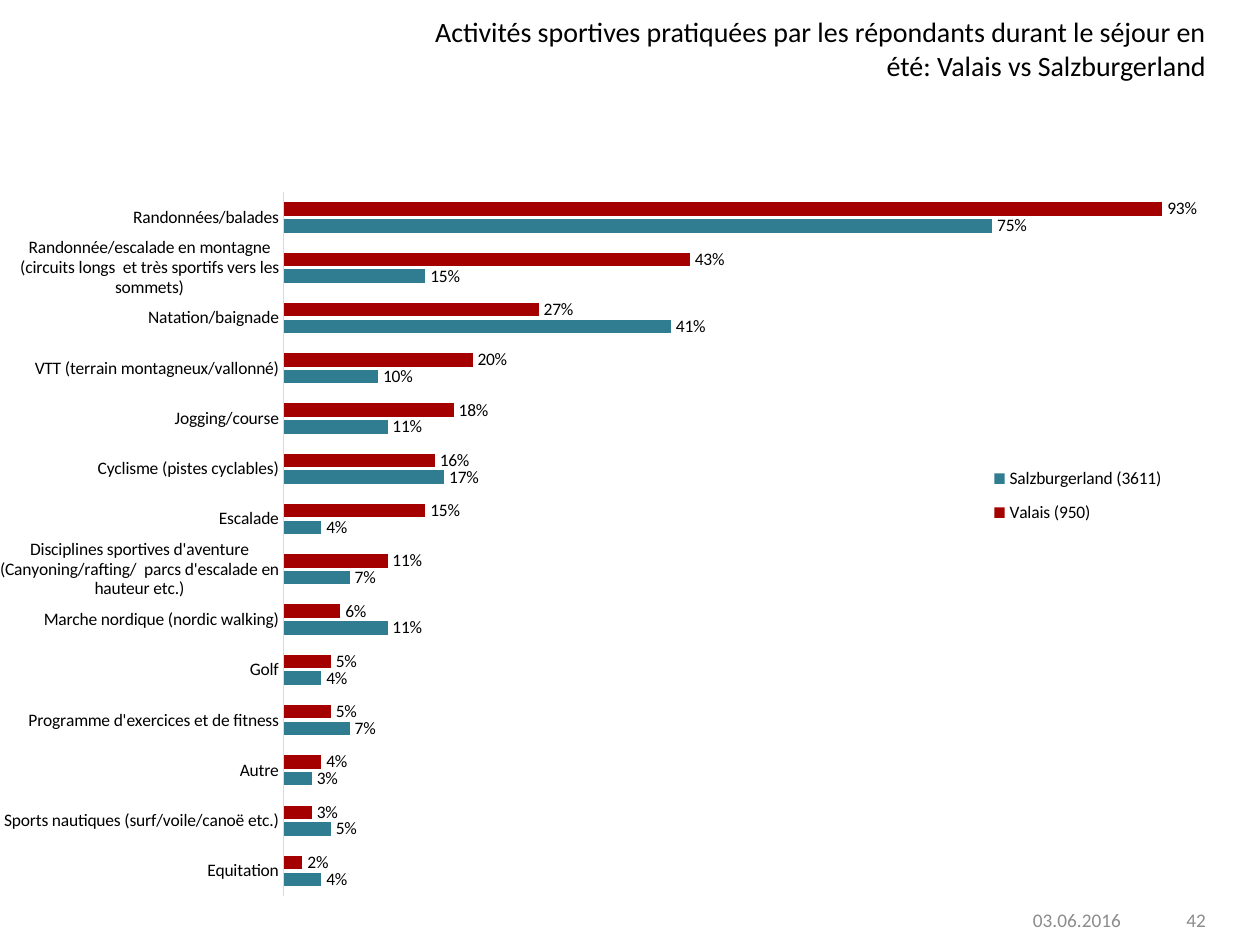
from dataclasses import dataclass

from lxml.etree import SubElement
from pptx import Presentation
from pptx.chart.data import CategoryChartData
from pptx.dml.color import RGBColor
from pptx.enum.chart import (XL_CHART_TYPE, XL_LABEL_POSITION,
                             XL_LEGEND_POSITION, XL_TICK_MARK)
from pptx.enum.text import MSO_ANCHOR, PP_ALIGN
from pptx.oxml import parse_xml
from pptx.oxml.ns import nsdecls, qn
from pptx.util import Inches, Pt


@dataclass(frozen=True)
class Theme:
    font: str = "Calibri"
    title_size: int = 16
    footer_size: int = 11
    chart_size: int = 10
    text: str = "000000"
    footer: str = "8C8C8C"
    axis: str = "D9D9D9"
    valais: str = "A40000"
    salzburgerland: str = "307C90"


THEME = Theme()
WIDTH, HEIGHT = 10, 7.5
RIGHT_EDGE = 9.67
FOOTER_TOP, FOOTER_HEIGHT = 7.1, 0.4

# Activity, share in Valais, share in Salzburgerland
ACTIVITIES = [
    ("Randonnées/balades", 0.93, 0.75),
    ("Randonnée/escalade en montagne (circuits longs  et très sportifs "
     "vers les sommets)", 0.43, 0.15),
    ("Natation/baignade", 0.27, 0.41),
    ("VTT (terrain montagneux/vallonné)", 0.20, 0.10),
    ("Jogging/course", 0.18, 0.11),
    ("Cyclisme (pistes cyclables)", 0.16, 0.17),
    ("Escalade", 0.15, 0.04),
    ("Disciplines sportives d'aventure (Canyoning/rafting/  parcs "
     "d'escalade en hauteur etc.)", 0.11, 0.07),
    ("Marche nordique (nordic walking)", 0.06, 0.11),
    ("Golf", 0.05, 0.04),
    ("Programme d'exercices et de fitness", 0.05, 0.07),
    ("Autre", 0.04, 0.03),
    ("Sports nautiques (surf/voile/canoë etc.)", 0.03, 0.05),
    ("Equitation", 0.02, 0.04),
]


def style_font(font, size, color):
    font.name = THEME.font
    font.size = Pt(size)
    font.color.rgb = RGBColor.from_string(color)


def add_text(slide, text, box, size, color, align=PP_ALIGN.LEFT,
             anchor=MSO_ANCHOR.TOP):
    shape = slide.shapes.add_textbox(*map(Inches, box))
    frame = shape.text_frame
    frame.word_wrap = True
    frame.vertical_anchor = anchor
    paragraph = frame.paragraphs[0]
    paragraph.text = text
    paragraph.alignment = align
    style_font(paragraph.font, size, color)


def manual_layout(x, y, width, height, inner=False):
    """Chart layout given as shares of the chart's size."""
    layout = parse_xml(f"<c:layout {nsdecls('c')}><c:manualLayout/></c:layout>")
    values = [("layoutTarget", "inner")] if inner else []
    values += [("xMode", "edge"), ("yMode", "edge"),
               ("x", x), ("y", y), ("w", width), ("h", height)]
    for tag, value in values:
        SubElement(layout[0], qn(f"c:{tag}")).set("val", str(value))
    return layout


def drop_layout(element):
    for layout in element.findall(qn("c:layout")):
        element.remove(layout)


def style_axes(chart):
    category_axis = chart.category_axis
    category_axis.reverse_order = True
    category_axis.has_major_gridlines = False
    category_axis.major_tick_mark = XL_TICK_MARK.NONE
    category_axis.minor_tick_mark = XL_TICK_MARK.NONE
    category_axis.format.line.color.rgb = RGBColor.from_string(THEME.axis)
    category_axis.format.line.width = Pt(0.75)
    style_font(category_axis.tick_labels.font, THEME.chart_size, THEME.text)

    value_axis = chart.value_axis
    value_axis.minimum_scale, value_axis.maximum_scale = 0, 1
    value_axis.has_major_gridlines = False
    value_axis.visible = False


def style_bars(plot):
    plot.gap_width = 150
    plot.overlap = -25
    plot.vary_by_categories = False
    for series, color in zip(plot.series, (THEME.valais, THEME.salzburgerland)):
        series.format.fill.solid()
        series.format.fill.fore_color.rgb = RGBColor.from_string(color)

    plot.has_data_labels = True
    labels = plot.data_labels
    labels.show_value = True
    labels.number_format = "0%"
    labels.number_format_is_linked = False
    labels.position = XL_LABEL_POSITION.OUTSIDE_END
    style_font(labels.font, THEME.chart_size, THEME.text)


def add_legend(chart):
    chart.has_legend = True
    legend = chart.legend
    legend.position = XL_LEGEND_POSITION.BOTTOM
    legend.include_in_layout = False
    style_font(legend.font, THEME.chart_size, THEME.text)
    element = legend._element
    drop_layout(element)
    element.find(qn("c:legendPos")).addnext(
        manual_layout(0.77, 0.42, 0.17, 0.1))


def add_activity_chart(slide, box):
    names, valais, salzburgerland = zip(*ACTIVITIES)
    data = CategoryChartData(number_format="0%")
    data.categories = names
    data.add_series("Valais (950)", valais)
    data.add_series("Salzburgerland (3611)", salzburgerland)
    chart = slide.shapes.add_chart(
        XL_CHART_TYPE.BAR_CLUSTERED, *map(Inches, box), data).chart
    chart.has_title = False
    style_font(chart.font, THEME.chart_size, THEME.text)
    style_axes(chart)
    style_bars(chart.plots[0])
    add_legend(chart)

    plot_area = chart._chartSpace.chart.plotArea
    drop_layout(plot_area)
    plot_area.insert(0, manual_layout(0.223, 0.102, 0.752, 0.854, inner=True))


def main():
    presentation = Presentation()
    presentation.slide_width = Inches(WIDTH)
    presentation.slide_height = Inches(HEIGHT)
    slide = presentation.slides.add_slide(presentation.slide_layouts[6])

    # Footer: date and slide number
    add_text(slide, "03.06.2016", (8.1, FOOTER_TOP, 1, FOOTER_HEIGHT),
             THEME.footer_size, THEME.footer, anchor=MSO_ANCHOR.MIDDLE)
    add_text(slide, "42", (RIGHT_EDGE - 2.33, FOOTER_TOP, 2.33, FOOTER_HEIGHT),
             THEME.footer_size, THEME.footer, PP_ALIGN.RIGHT, MSO_ANCHOR.MIDDLE)

    # Title
    add_text(slide, "Activités sportives pratiquées par les répondants durant "
             "le séjour en été: Valais vs Salzburgerland",
             (RIGHT_EDGE - 6.7, 0.07, 6.7, 0.64),
             THEME.title_size, THEME.text, PP_ALIGN.RIGHT)

    # Comparison of the two regions
    add_activity_chart(slide, (0, 0.86, WIDTH, 6.54))

    presentation.save("out.pptx")


if __name__ == "__main__":
    main()
